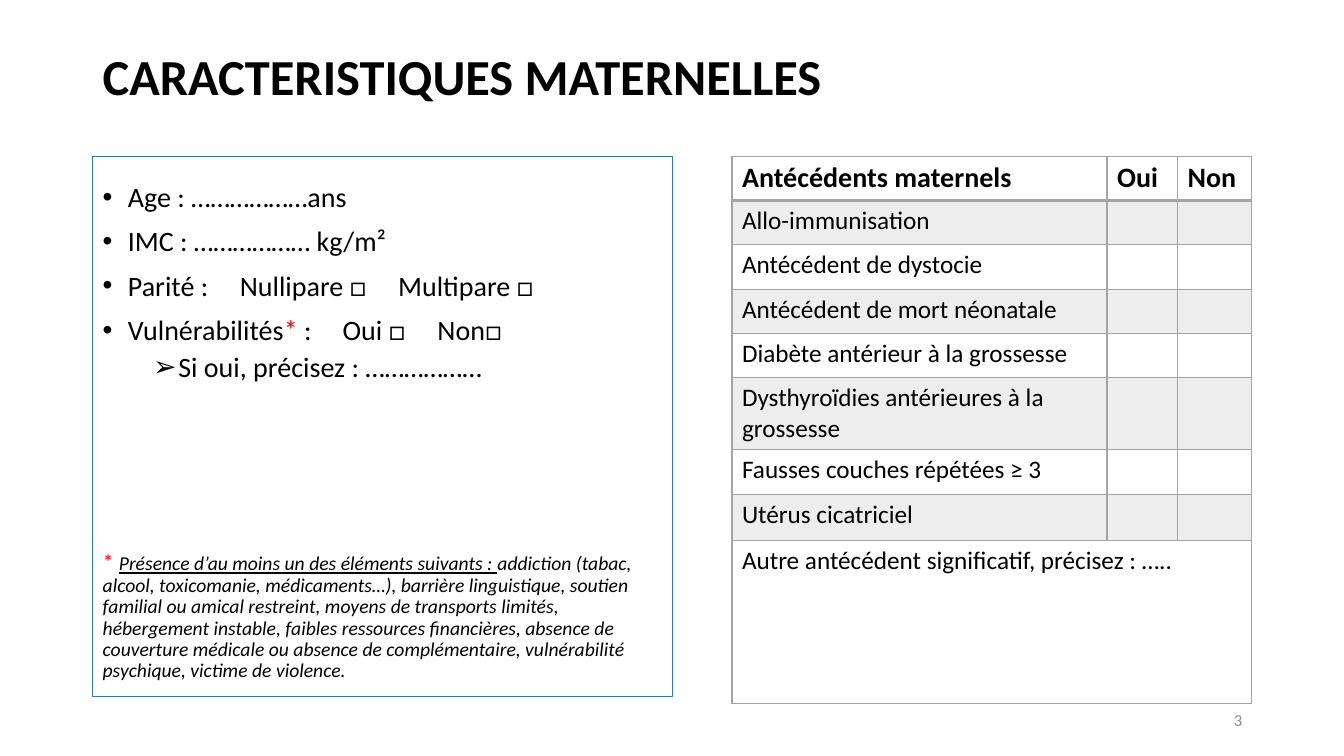
from lxml import etree
from pptx import Presentation
from pptx import util as u
from pptx.dml.color import RGBColor
from pptx.enum import shapes, text
from pptx.oxml.ns import qn

THEME = dict(
    font="Calibri", black="000000", red="FF0000", white="FFFFFF",
    frame="2E75B6", rule="A5A5A5", band="EDEDED", page="8C8C8C",
    title=36, body=20, row=18, star=16, note=14, number=12,
)

deck = Presentation()
deck.slide_width, deck.slide_height = u.Inches(13.33), u.Inches(7.5)
slide = deck.slides.add_slide(deck.slide_layouts[6])

# Two columns between equal margins
LEFT, WIDTH, TOP, HEIGHT = 0.92, 11.5, 1.55, 5.36
FORM_WIDTH = WIDTH / 2
HISTORY_LEFT = 7.26


def style(font, size, color="black", bold=False):
    font.name, font.size, font.bold = THEME["font"], u.Pt(THEME[size]), bold
    font.color.rgb = RGBColor.from_string(THEME[color])


def add_xml(parent, tag, **attributes):
    return etree.SubElement(parent, qn(tag), {k: str(v) for k, v in attributes.items()})


# Title and slide number
for words, box, size, color, bold, align in (
    ("CARACTERISTIQUES MATERNELLES", (LEFT, 0.4, WIDTH, 0.78),
     "title", "black", True, text.PP_ALIGN.LEFT),
    ("3", (LEFT + WIDTH - 3, 6.95, 3, 0.4), "number", "page", False, text.PP_ALIGN.RIGHT),
):
    label = slide.shapes.add_textbox(*map(u.Inches, box)).text_frame
    label.word_wrap = True
    label.vertical_anchor = text.MSO_ANCHOR.MIDDLE
    line = label.paragraphs[0]
    line.text, line.alignment, line.line_spacing = words, align, 0.9
    style(line.font, size, color, bold)

# Framed form on the left
form = slide.shapes.add_shape(
    shapes.MSO_SHAPE.RECTANGLE, *map(u.Inches, (LEFT, TOP, FORM_WIDTH, HEIGHT)))
form.shadow.inherit = False
form.fill.background()
form.line.color.rgb = RGBColor.from_string(THEME["frame"])
form.line.width = u.Pt(0.75)
questions = form.text_frame
questions.word_wrap = True
questions.vertical_anchor = text.MSO_ANCHOR.TOP
questions.margin_top = u.Inches(0.27)

# Each entry: runs, bullet, left indent, space before, tab stops
entries = [
    (["Age : ………………ans"], "•", 0.25, 0, ()),
    (["IMC : ……………… kg/m²"], "•", 0.25, 10, ()),
    (["Parité :\tNullipare □\tMultipare □"], "•", 0.25, 10, (1.36, 2.93)),
    (["Vulnérabilités", "*", " :\tOui □\tNon□"], "•", 0.25, 10, (2.38, 3.32)),
    (["Si oui, précisez : ………………"], "➢", 0.75, 5, ()),
]
for i, (runs, bullet, indent, before, stops) in enumerate(entries):
    entry = questions.paragraphs[0] if i == 0 else questions.add_paragraph()
    entry.alignment, entry.line_spacing = text.PP_ALIGN.LEFT, 0.9
    entry.space_before = u.Pt(before)
    style(entry.font, "body")
    for words in runs:
        run = entry.add_run()
        run.text = words
        style(run.font, "body", "red" if words == "*" else "black")
    props = entry._p.get_or_add_pPr()
    props.set("marL", str(u.Inches(indent)))
    props.set("indent", str(u.Inches(-0.25)))
    # Bullet and tab stops come before the default run properties
    defaults = props.find(qn("a:defRPr"))
    props.remove(defaults)
    add_xml(props, "a:buFont", typeface="Arial")
    add_xml(props, "a:buChar", char=bullet)
    if stops:
        tabs = add_xml(props, "a:tabLst")
        for stop in stops:
            add_xml(tabs, "a:tab", pos=u.Inches(stop), algn="l")
    props.append(defaults)

# Footnote at the bottom of the form
footnote = questions.add_paragraph()
footnote.alignment, footnote.line_spacing = text.PP_ALIGN.LEFT, 0.9
footnote.space_before = u.Pt(120)
for words, size, color, italic, underline in (
    ("* ", "star", "red", False, False),
    ("Présence d’au moins un des éléments suivants : ", "note", "black", True, True),
    ("addiction (tabac, alcool, toxicomanie, médicaments…), barrière linguistique, "
     "soutien familial ou amical restreint, moyens de transports limités, hébergement "
     "instable, faibles ressources financières, absence de couverture médicale ou absence "
     "de complémentaire, vulnérabilité psychique, victime de violence.",
     "note", "black", True, False),
):
    run = footnote.add_run()
    run.text = words
    style(run.font, size, color)
    run.font.italic, run.font.underline = italic, underline

# Maternal history table on the right
history = [
    ("Antécédents maternels", 0.44),
    ("Allo-immunisation", 0.44),
    ("Antécédent de dystocie", 0.44),
    ("Antécédent de mort néonatale", 0.44),
    ("Diabète antérieur à la grossesse", 0.44),
    ("Dysthyroïdies antérieures à la grossesse", 0.71),
    ("Fausses couches répétées ≥ 3", 0.45),
    ("Utérus cicatriciel", 0.45),
    ("Autre antécédent significatif, précisez : …..", 1.62),
]
columns = (3.72, 0.7, 0.73)
last = len(history) - 1
table = slide.shapes.add_table(
    len(history), len(columns), u.Inches(HISTORY_LEFT), u.Inches(TOP),
    u.Inches(sum(columns)), u.Inches(sum(height for _, height in history))).table
table.first_row = table.horz_banding = False
for column, width in zip(table.columns, columns):
    column.width = u.Inches(width)
table.cell(last, 0).merge(table.cell(last, len(columns) - 1))

for r, (words, height) in enumerate(history):
    table.rows[r].height = u.Inches(height)
    answers = ("Oui", "Non") if r == 0 else ("", "")
    for c, content in enumerate((words, *answers)):
        cell = table.cell(r, c)
        if content:
            cell.text = content
        style(cell.text_frame.paragraphs[0].font, "row" if r else "body", bold=r == 0)
        # Borders precede the fill; the rule around the header is heavier below
        props = cell._tc.get_or_add_tcPr()
        for side in ("L", "R", "T", "B"):
            heavy = (r, side) in ((0, "B"), (1, "T"))
            border = add_xml(props, f"a:ln{side}", w=u.Pt(2 if heavy else 1))
            add_xml(add_xml(border, "a:solidFill"), "a:srgbClr", val=THEME["rule"])
        cell.fill.solid()
        banded = r % 2 == 1
        cell.fill.fore_color.rgb = RGBColor.from_string(THEME["band" if banded else "white"])

deck.save("out.pptx")
